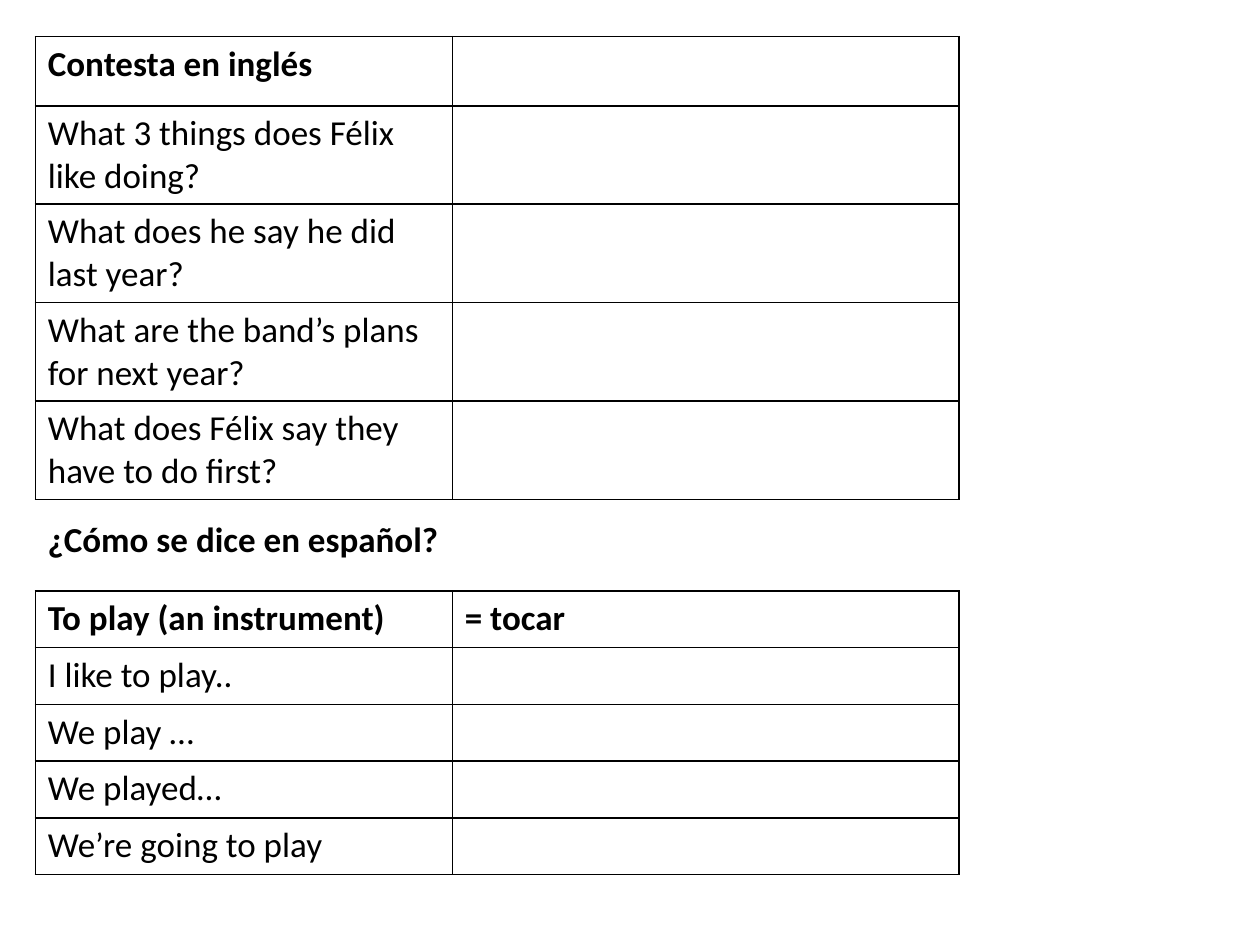
from lxml import etree
from pptx import Presentation
from pptx.dml.color import RGBColor
from pptx.enum.text import MSO_AUTO_SIZE
from pptx.oxml.ns import qn
from pptx.util import Inches, Pt

FIT_SHAPE = MSO_AUTO_SIZE.SHAPE_TO_FIT_TEXT
BLANK_LAYOUT = 6
FONT = "Calibri"
BLACK = "000000"
LEFT = 0.28
COLUMN_WIDTHS = [3.31, 4.02]

QUESTIONS = [
    ("Contesta en inglés", ""),
    ("What 3 things does Félix like doing?", ""),
    ("What does he say he did last year?", ""),
    ("What are the band’s plans for next year?", ""),
    ("What does Félix say they have to do first?", ""),
]
PHRASES = [
    ("To play (an instrument)", "= tocar"),
    ("I like to play..", ""),
    ("We play …", ""),
    ("We played…", ""),
    ("We’re going to play", ""),
]


def color(hex_value):
    return RGBColor.from_string(hex_value)


def write_text(frame, text, size=20, bold=False, fill=BLACK):
    para = frame.paragraphs[0]
    para.font.size = Pt(size)
    if text:
        span = para.add_run()
        span.text = text
        span.font.name = FONT
        span.font.size = Pt(size)
        span.font.bold = bold
        span.font.color.rgb = color(fill)


def set_borders(cell, hex_value=BLACK, width=1):
    properties = cell._tc.get_or_add_tcPr()
    for position, side in enumerate(("lnL", "lnR", "lnT", "lnB")):
        line = etree.Element(qn(f"a:{side}"), w=str(Pt(width)))
        fill = etree.SubElement(line, qn("a:solidFill"))
        etree.SubElement(fill, qn("a:srgbClr"), val=hex_value)
        # Borders come before the cell fill
        properties.insert(position, line)


def add_grid(page, top, rows, row_heights):
    frame = page.shapes.add_table(
        len(rows), len(COLUMN_WIDTHS), Inches(LEFT), Inches(top),
        Inches(sum(COLUMN_WIDTHS)), Inches(sum(row_heights)))
    table = frame.table
    table.first_row = False
    table.horz_banding = False
    for column, width in zip(table.columns, COLUMN_WIDTHS):
        column.width = Inches(width)
    for row_index, (texts, height) in enumerate(zip(rows, row_heights)):
        table.rows[row_index].height = Inches(height)
        for column_index, text in enumerate(texts):
            cell = table.cell(row_index, column_index)
            cell.fill.background()
            set_borders(cell)
            write_text(cell.text_frame, text, bold=row_index == 0)


def add_heading(page, text, left, top, width, height):
    box = page.shapes.add_textbox(
        Inches(left), Inches(top), Inches(width), Inches(height))
    box.text_frame.word_wrap = True
    box.text_frame.auto_size = FIT_SHAPE
    write_text(box.text_frame, text, bold=True)


def main():
    deck = Presentation()
    deck.slide_width = Inches(10)
    deck.slide_height = Inches(7.5)
    page = deck.slides.add_slide(deck.slide_layouts[BLANK_LAYOUT])

    # Translation practice
    add_grid(page, 4.69, PHRASES, [0.45] * 5)
    # Comprehension questions
    add_grid(page, 0.29, QUESTIONS, [0.55] + [0.78] * 4)
    # Heading between the two tables
    add_heading(page, "¿Cómo se dice en español?", LEFT, 4.06, 7.8, 0.44)

    deck.save("out.pptx")


if __name__ == "__main__":
    main()
